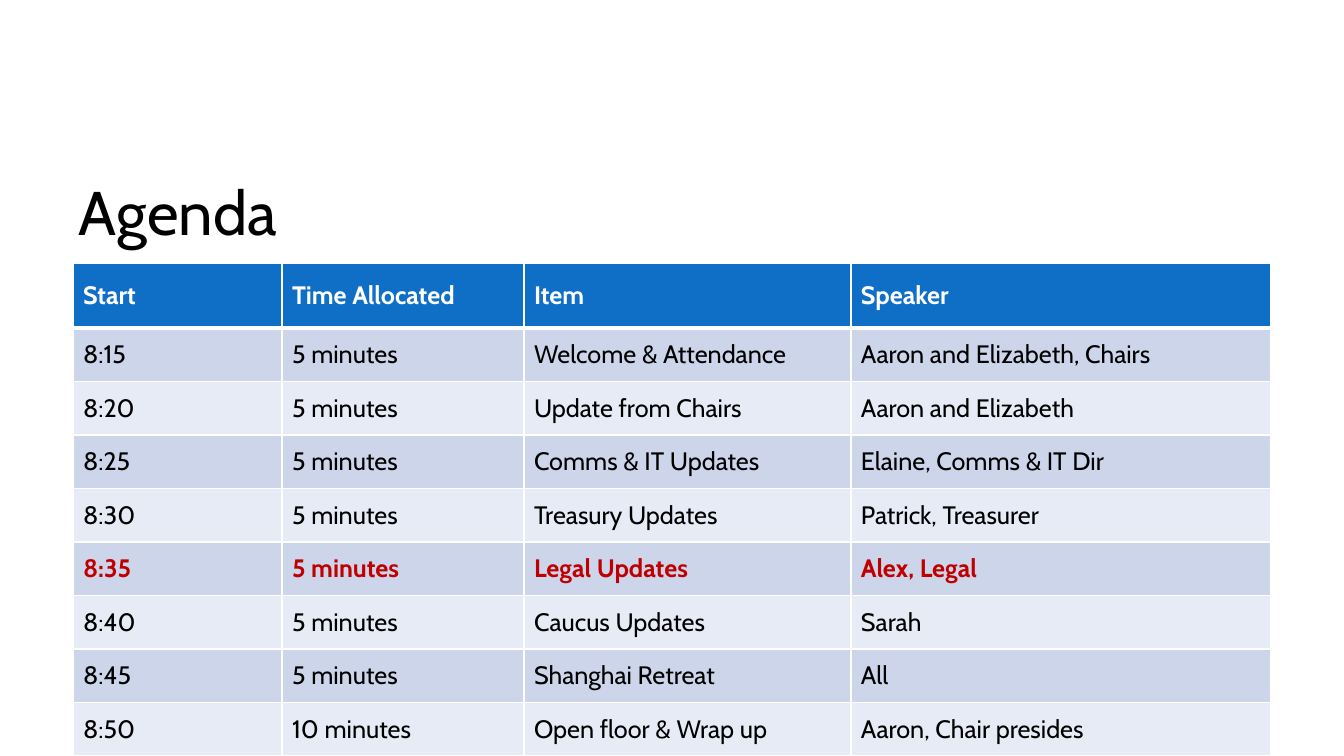
from lxml.etree import SubElement
from pptx import Presentation
from pptx.dml.color import RGBColor
from pptx.enum.text import MSO_ANCHOR
from pptx.oxml.ns import qn
from pptx.util import Pt

SCALE = 914400 / 100.8
FONT = "Cabin"
BLACK = RGBColor(0x00, 0x00, 0x00)
WHITE = RGBColor(0xFF, 0xFF, 0xFF)
BLUE = RGBColor(0x0F, 0x6F, 0xC6)
RED = RGBColor(0xC0, 0x00, 0x00)
BANDS = (RGBColor(0xCC, 0xD5, 0xEA), RGBColor(0xE7, 0xEB, 0xF5))

COLS = (209, 242, 327, 420)
HEAD = 65
URGENT = "8:35"
ROWS = (
    ("Start", "Time Allocated", "Item", "Speaker"),
    ("8:15", "5 minutes", "Welcome & Attendance", "Aaron and Elizabeth, Chairs"),
    ("8:20", "5 minutes", "Update from Chairs", "Aaron and Elizabeth"),
    ("8:25", "5 minutes", "Comms & IT Updates", "Elaine, Comms & IT Dir"),
    ("8:30", "5 minutes", "Treasury Updates", "Patrick, Treasurer"),
    ("8:35", "5 minutes", "Legal Updates", "Alex, Legal"),
    ("8:40", "5 minutes", "Caucus Updates", "Sarah"),
    ("8:45", "5 minutes", "Shanghai Retreat", "All"),
    ("8:50", "10 minutes", "Open floor & Wrap up", "Aaron, Chair presides"),
)


def px(size):
    return round(size * SCALE)


def write(frame, text, size, color, bold=False):
    para = frame.paragraphs[0]
    run = para.add_run()
    run.text = text
    run.font.name = FONT
    run.font.size = Pt(size)
    run.font.bold = bold
    run.font.color.rgb = color
    return para


def border(cell, row):
    props = cell._tc.get_or_add_tcPr()
    widths = {"L": 1, "R": 1, "T": 3 if row == 1 else 1, "B": 3 if row == 0 else 1}
    for side, width in widths.items():
        line = SubElement(props, qn(f"a:ln{side}"), w=str(Pt(width)))
        fill = SubElement(line, qn("a:solidFill"))
        SubElement(fill, qn("a:srgbClr"), val=str(WHITE))


def add_title(slide, left, top, width, height):
    box = slide.shapes.add_textbox(px(left), px(top), px(width), px(height))
    frame = box.text_frame
    frame.word_wrap = True
    frame.vertical_anchor = MSO_ANCHOR.MIDDLE
    write(frame, "Agenda", 44, BLACK).line_spacing = 0.9


def add_agenda(slide, left, top, width, height):
    shape = slide.shapes.add_table(
        len(ROWS), len(COLS), px(left), px(top), px(width), px(height))
    table = shape.table
    for col, size in zip(table.columns, COLS):
        col.width = px(size * width / sum(COLS))
    for r, texts in enumerate(ROWS):
        table.rows[r].height = px((height - HEAD) / (len(ROWS) - 1) if r else HEAD)
        urgent = texts[0] == URGENT
        color = WHITE if r == 0 else RED if urgent else BLACK
        for c, text in enumerate(texts):
            cell = table.cell(r, c)
            border(cell, r)
            cell.fill.solid()
            cell.fill.fore_color.rgb = BANDS[(r - 1) % 2] if r else BLUE
            cell.vertical_anchor = MSO_ANCHOR.MIDDLE
            write(cell.text_frame, text, 18, color, r == 0 or urgent)


def main():
    deck = Presentation()
    deck.slide_width = px(1344)
    deck.slide_height = px(756)
    slide = deck.slides.add_slide(deck.slide_layouts[6])
    add_title(slide, 69, 143, 1049, 146)
    add_agenda(slide, 73, 263, 1198, 493)
    deck.save("out.pptx")


if __name__ == "__main__":
    main()
